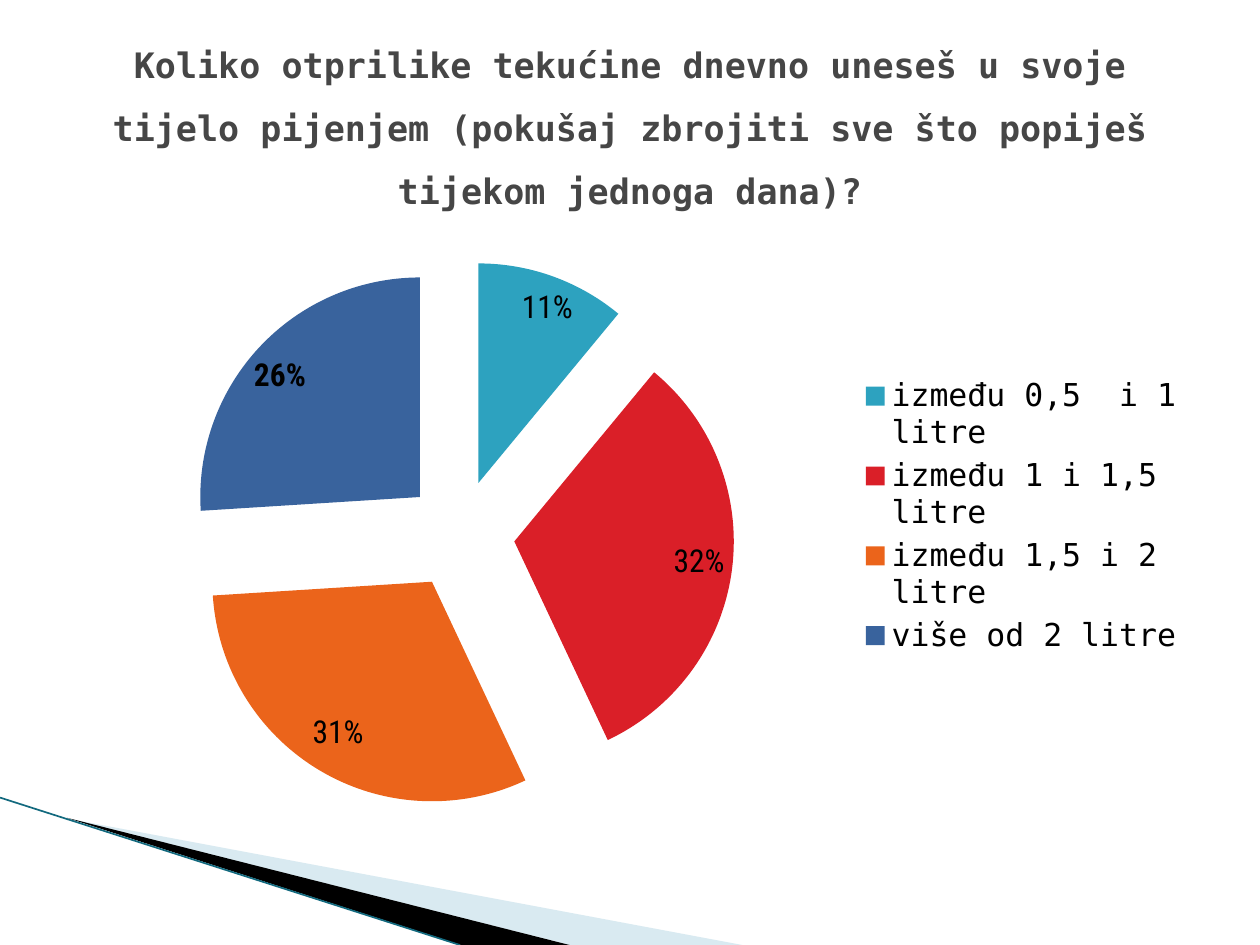
from copy import deepcopy

from lxml import etree
from pptx import Presentation
from pptx.chart.data import CategoryChartData
from pptx.dml.color import RGBColor
from pptx.enum.chart import XL_CHART_TYPE as ChartType
from pptx.enum.chart import XL_LABEL_POSITION as LabelPosition
from pptx.enum.chart import XL_LEGEND_POSITION as LegendPosition
from pptx.enum.shapes import MSO_CONNECTOR as Connector
from pptx.enum.text import MSO_ANCHOR as Anchor
from pptx.enum.text import MSO_AUTO_SIZE as AutoSize
from pptx.enum.text import PP_ALIGN as Align
from pptx.oxml import parse_xml
from pptx.oxml.ns import nsdecls, qn
from pptx.util import Inches, Pt

BLACK = RGBColor(0x00, 0x00, 0x00)
TITLE_GREY = RGBColor(0x46, 0x46, 0x46)
PALE_BLUE = RGBColor(0xA0, 0xCB, 0xDC)
EDGE_TEAL = RGBColor(0x12, 0x69, 0x7E)
TEAL = RGBColor(0x2D, 0xA2, 0xBF)
RED = RGBColor(0xDA, 0x1F, 0x28)
ORANGE = RGBColor(0xEB, 0x64, 0x1B)
BLUE = RGBColor(0x39, 0x63, 0x9D)

QUESTION = (
    "Koliko otprilike tekućine dnevno uneseš u svoje tijelo pijenjem "
    "(pokušaj zbrojiti sve što popiješ tijekom jednoga dana)?"
)
# answer, percent, colour, label shift as fractions of the chart, bold label
ANSWERS = [
    ("između 0,5  i 1 litre", 11, TEAL, (0.02, 0.01), False),
    ("između 1 i 1,5 litre", 32, RED, (0, 0.02), False),
    ("između 1,5 i 2 litre", 31, ORANGE, (-0.01, -0.02), False),
    ("više od 2 litre", 26, BLUE, (-0.01, 0.01), True),
]


class SlideBuilder:
    text_font = "DejaVu Sans Mono"
    label_font = "Roboto Condensed"

    def __init__(self, page):
        self.page = page

    def title(self, text, left, top, width, height):
        box = self.page.shapes.title
        box.left, box.top = Inches(left), Inches(top)
        box.width, box.height = Inches(width), Inches(height)
        frame = box.text_frame
        frame.text = text
        frame.auto_size = AutoSize.NONE
        frame.vertical_anchor = Anchor.MIDDLE
        para = frame.paragraphs[0]
        para.alignment = Align.CENTER
        para.line_spacing = 1.5
        self.style(para.font, 20, TITLE_GREY, self.text_font)
        para.font.bold = True

    def style(self, font, size, color, name):
        font.size = Pt(size)
        font.name = name
        font.color.rgb = color

    def wedge(self, points, color, opacity=None):
        """Draw a filled polygon; opacity is a percentage."""
        corners = [(Inches(x), Inches(y)) for x, y in points]
        builder = self.page.shapes.build_freeform(*corners[0])
        builder.add_line_segments(corners[1:], close=True)
        shape = builder.convert_to_shape()
        shape.shadow.inherit = False
        shape.fill.solid()
        shape.fill.fore_color.rgb = color
        shape.line.fill.background()
        if opacity is not None:
            fill_color = shape._element.spPr.find(".//" + qn("a:srgbClr"))
            alpha = etree.SubElement(fill_color, qn("a:alpha"))
            alpha.set("val", str(opacity * 1000))

    def line(self, start, end, color, width):
        ends = [Inches(value) for value in (*start, *end)]
        connector = self.page.shapes.add_connector(Connector.STRAIGHT, *ends)
        connector.line.color.rgb = color
        connector.line.width = Pt(width)
        etree.SubElement(connector._element.spPr, qn("a:effectLst"))

    def pie(self, answers, left, top, width, height):
        names, values, colors, shifts, bolds = zip(*answers)
        data = CategoryChartData()
        data.categories = names
        data.add_series("Series 1", values)
        area = [Inches(value) for value in (left, top, width, height)]
        chart = self.page.shapes.add_chart(ChartType.PIE, *area, data).chart
        chart.has_title = False
        self.style(chart.font, 18, BLACK, self.text_font)
        chart.has_legend = True
        chart.legend.position = LegendPosition.RIGHT
        chart.legend.include_in_layout = False

        plot = chart.plots[0]
        plot.vary_by_categories = True
        series = plot.series[0]
        for index, color in enumerate(colors):
            fill = series.points[index].format.fill
            fill.solid()
            fill.fore_color.rgb = color
        labels = series.data_labels
        labels.show_percentage = True
        labels.show_value = False
        labels.number_format = "0%"
        labels.number_format_is_linked = False
        labels.position = LabelPosition.INSIDE_END
        self.style(labels.font, 18, BLACK, self.label_font)
        self.shift_labels(labels, shifts, bolds)
        self.explode(series, 25)
        self.place_plot(chart, x=0.1, y=0.09, w=0.5, h=0.88)

    def shift_labels(self, labels, shifts, bolds):
        """Give every slice its own label, moved from the default place."""
        parent = labels._element
        shared = [
            child for child in parent if child.tag != qn("c:showLeaderLines")
        ]
        for index, ((x, y), bold) in enumerate(zip(shifts, bolds)):
            label = parse_xml(
                f'<c:dLbl {nsdecls("c")}><c:idx val="{index}"/><c:layout>'
                f'<c:manualLayout><c:x val="{x}"/><c:y val="{y}"/>'
                "</c:manualLayout></c:layout></c:dLbl>"
            )
            label.extend(deepcopy(child) for child in shared)
            label.find(".//" + qn("a:defRPr")).set("b", str(int(bold)))
            parent.insert(index, label)

    def explode(self, series, percent):
        explosion = parse_xml(f'<c:explosion {nsdecls("c")} val="{percent}"/>')
        series._element.find(qn("c:dPt")).addprevious(explosion)

    def place_plot(self, chart, **fractions):
        """Fix the plot area as fractions of the chart's size."""
        plot_area = chart._chartSpace.chart.plotArea
        for old in plot_area.findall(qn("c:layout")):
            plot_area.remove(old)
        sizes = "".join(f'<c:{key} val="{val}"/>' for key, val in fractions.items())
        plot_area.insert(0, parse_xml(
            f'<c:layout {nsdecls("c")}><c:manualLayout>'
            '<c:layoutTarget val="inner"/><c:xMode val="edge"/><c:yMode val="edge"/>'
            f"{sizes}</c:manualLayout></c:layout>"
        ))


def main():
    deck = Presentation()
    deck.slide_width, deck.slide_height = Inches(10), Inches(7.5)
    title_only = deck.slide_layouts[5]
    slide = SlideBuilder(deck.slides.add_slide(title_only))
    slide.wedge([(0.55, 6.5), (5.89, 7.5), (4.52, 7.5)], PALE_BLUE, opacity=40)
    slide.wedge([(0.53, 6.49), (4.52, 7.5), (3.66, 7.5)], BLACK)
    slide.line((0, 6.33), (3.65, 7.5), EDGE_TEAL, 0.95)
    slide.pie(ANSWERS, 0.5, 1.62, 9, 4.95)
    slide.title(QUESTION, 0.5, 0.3, 9, 1.25)
    deck.save("out.pptx")


if __name__ == "__main__":
    main()
